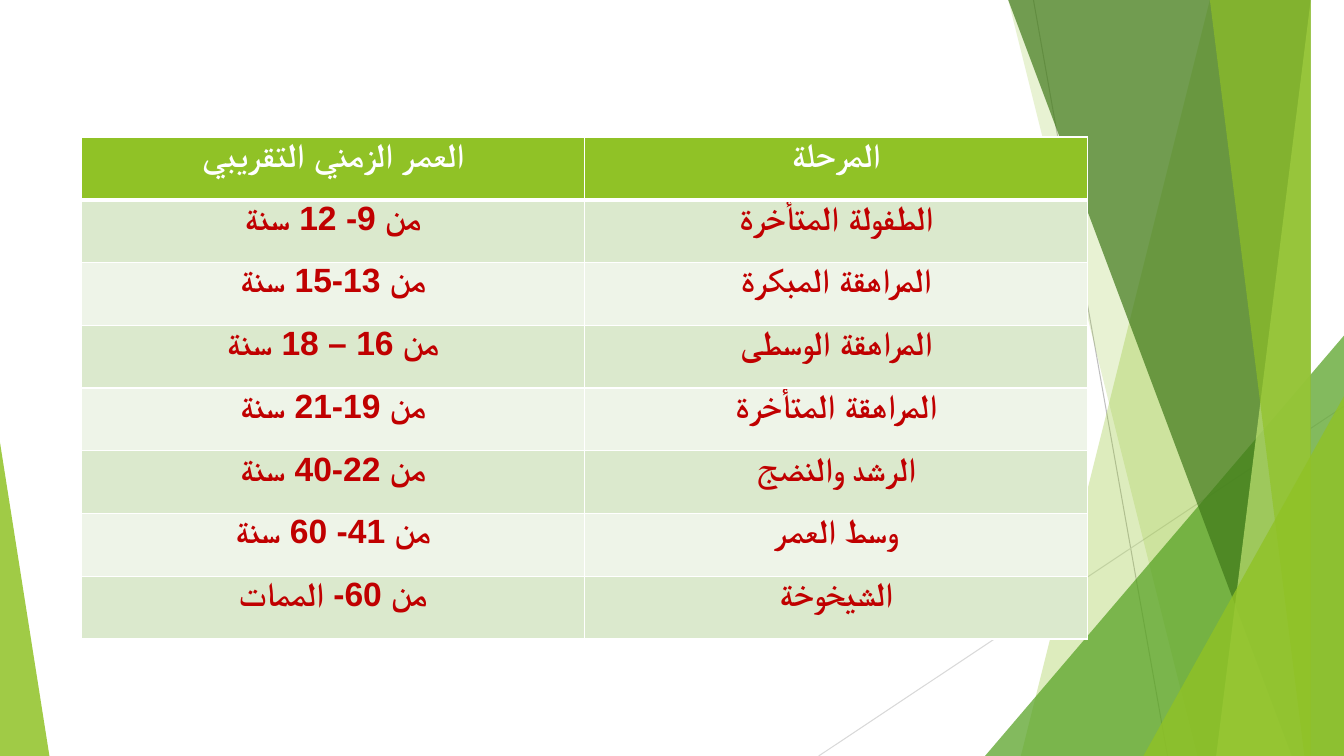
from dataclasses import dataclass

from lxml.etree import SubElement
from pptx import Presentation
from pptx.dml.color import RGBColor
from pptx.dml.fill import FillFormat
from pptx.enum.shapes import MSO_CONNECTOR, MSO_SHAPE
from pptx.enum.text import PP_ALIGN
from pptx.oxml.ns import qn
from pptx.shapes.base import BaseShape
from pptx.shapes.shapetree import SlideShapes
from pptx.table import _Cell as Cell
from pptx.util import Inches, Pt

WIDE, HIGH = 13.33, 7.5
LIME, WHITE, RED = "90C226", "FFFFFF", "C00000"
BANDS = ("EEF4E8", "DBE9CD")


@dataclass
class Line:
    start: tuple[float, float]
    end: tuple[float, float]
    color: str


@dataclass
class Panel:
    """A full-height band from a slanted left edge to the right of the slide."""
    top: float
    foot: float
    color: str
    alpha: int


@dataclass
class Wedge:
    """A right triangle on the foot of the slide, its tip above one end."""
    left: float
    top: float
    width: float
    tip: float
    color: str
    alpha: int


DECOR = (
    Line((10.25, 0), (11.58, HIGH), "BFBFBF"),
    Line((WIDE, 4.03), (8.12, HIGH), "D9D9D9"),
    Panel(12.28, 10.04, LIME, 30),
    Panel(10.5, 11.83, LIME, 20),
    Wedge(9.77, 3.33, 3.56, 1, "54A021", 72),
    Panel(10.21, 12.91, "3F7819", 70),
    Panel(13.03, 11.92, "C0E474", 70),
    Panel(11.96, 13.18, LIME, 65),
    Wedge(11.34, 3.93, 1.99, 1, LIME, 80),
    Wedge(0, 4.39, 0.49, 0, LIME, 85),
)

ROWS = (
    ("العمر الزمني التقريبي", "المرحلة"),
    ("من 9- 12 سنة", "الطفولة المتأخرة"),
    ("من 13-15 سنة", "المراهقة المبكرة"),
    ("من 16 – 18 سنة", "المراهقة الوسطى"),
    ("من 19-21 سنة", "المراهقة المتأخرة"),
    ("من 22-40 سنة", "الرشد والنضج"),
    ("من 41- 60 سنة", "وسط العمر"),
    ("من 60- الممات", "الشيخوخة"),
)


def paint(fill: FillFormat, color: str) -> None:
    fill.solid()
    fill.fore_color.rgb = RGBColor.from_string(color)


def style(shape: BaseShape, color: str, alpha: int) -> None:
    """Give a shape a see-through fill with no line or shadow."""
    paint(shape.fill, color)
    tint = shape._element.spPr.find(".//" + qn("a:srgbClr"))
    SubElement(tint, qn("a:alpha"), val=str(alpha * 1000))
    shape.line.fill.background()
    shape.shadow.inherit = False


def draw_line(shapes: SlideShapes, line: Line) -> None:
    ends = [Inches(n) for n in line.start + line.end]
    rule = shapes.add_connector(MSO_CONNECTOR.STRAIGHT, *ends)
    rule.line.width = Pt(0.75)
    paint(rule.line.fill, line.color)
    SubElement(rule._element.spPr, qn("a:effectLst"))


def draw_panel(shapes: SlideShapes, panel: Panel) -> None:
    pen = shapes.build_freeform(panel.top, 0, scale=Inches(1))
    pen.add_line_segments([(WIDE, 0), (WIDE, HIGH), (panel.foot, HIGH)])
    style(pen.convert_to_shape(), panel.color, panel.alpha)


def draw_wedge(shapes: SlideShapes, wedge: Wedge) -> None:
    shape = shapes.add_shape(
        MSO_SHAPE.ISOSCELES_TRIANGLE, Inches(wedge.left), Inches(wedge.top),
        Inches(wedge.width), Inches(HIGH - wedge.top))
    shape.adjustments[0] = wedge.tip
    style(shape, wedge.color, wedge.alpha)


def add_edges(cell: Cell, row: int) -> None:
    """Draw white borders, with a thick rule below the header."""
    props = cell._tc.get_or_add_tcPr()
    thick = {"lnB": 0, "lnT": 1}
    for side in ("lnL", "lnR", "lnT", "lnB"):
        width = Pt(3 if thick.get(side) == row else 1)
        edge = SubElement(props, qn("a:" + side), w=str(width))
        fill = SubElement(edge, qn("a:solidFill"))
        SubElement(fill, qn("a:srgbClr"), val=WHITE)


def fill_cell(cell: Cell, text: str, row: int) -> None:
    cell.margin_top = cell.margin_bottom = 0
    add_edges(cell, row)
    paint(cell.fill, BANDS[row % 2] if row else LIME)
    para = cell.text_frame.paragraphs[0]
    para.text = text
    para.alignment = PP_ALIGN.CENTER
    para._p.get_or_add_pPr().set("rtl", "1")
    for run in para.runs:
        font = run.font
        font.name, font.size, font.bold = "Calibri", Pt(24), True
        paint(font.fill, RED if row else WHITE)
        SubElement(run._r.get_or_add_rPr(), qn("a:cs"), typeface="Arial")


def draw_table(shapes: SlideShapes) -> None:
    frame = shapes.add_table(len(ROWS), len(ROWS[0]), Inches(0.81),
                             Inches(1.36), Inches(9.98), Inches(4.98))
    for row, texts in enumerate(ROWS):
        for col, text in enumerate(texts):
            fill_cell(frame.table.cell(row, col), text, row)


def main() -> None:
    deck = Presentation()
    deck.slide_width, deck.slide_height = Inches(WIDE), Inches(HIGH)
    slide = deck.slides.add_slide(deck.slide_layouts.get_by_name("Blank"))
    draw = {Line: draw_line, Panel: draw_panel, Wedge: draw_wedge}
    for item in DECOR:
        draw[type(item)](slide.shapes, item)
    draw_table(slide.shapes)
    deck.save("out.pptx")


if __name__ == "__main__":
    main()
